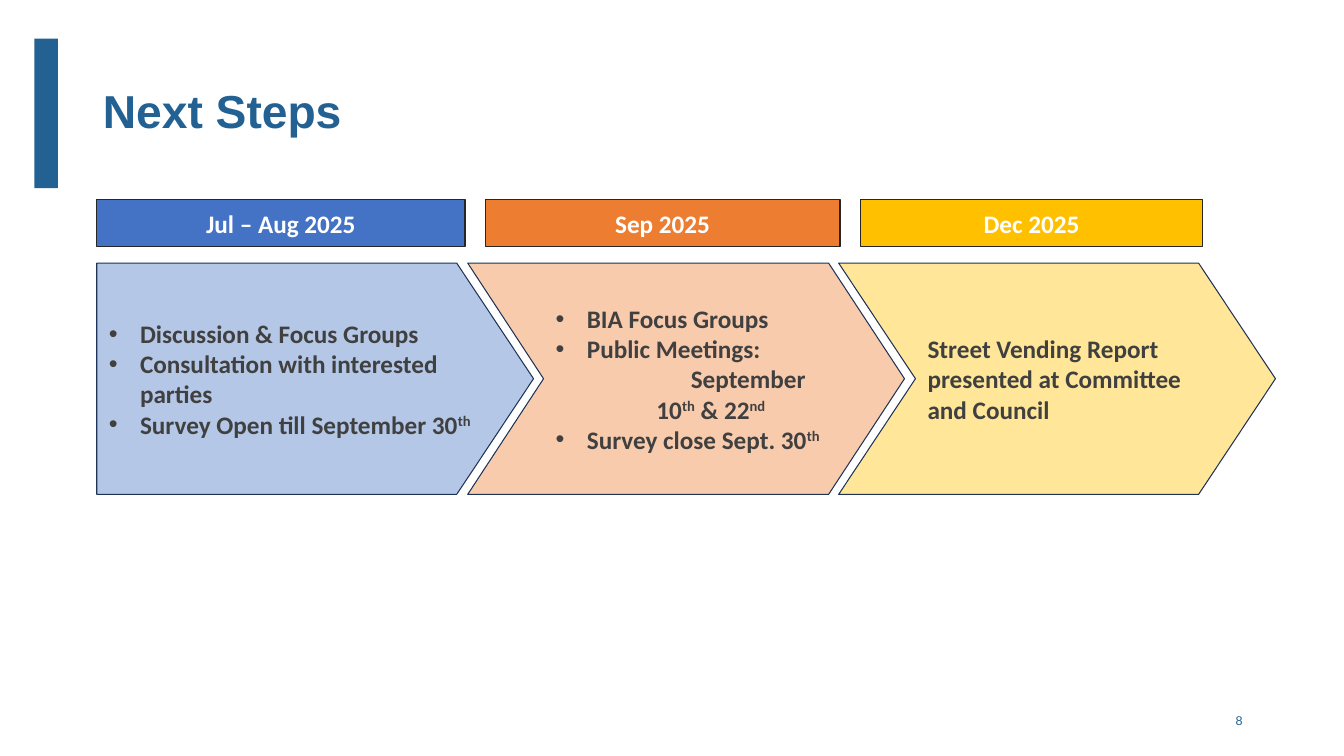
from lxml.etree import SubElement
from pptx import Presentation
from pptx.dml.color import RGBColor
from pptx.enum.shapes import MSO_SHAPE as Shape
from pptx.enum.text import MSO_ANCHOR as Anchor, PP_ALIGN as Align
from pptx.oxml.ns import qn
from pptx.util import Inches, Pt

NAVY, INK, WHITE = "236192", "404040", "FFFFFF"
HEADER_EDGE, ARROW_EDGE = "262626", "1E3256"

# Left margin and hanging indent of each paragraph kind, in inches
INDENTS = {"plain": (0, 0), "bullet": (0.31, -0.31), "dates": (1, 0.34)}

STEPS = [
    dict(period="Jul – Aug 2025", header_width=27.4, header_fill="4472C4",
         outline=Shape.PENTAGON, point=0.332, arrow_fill="B4C7E7",
         actions=[("bullet", "Discussion & Focus Groups"),
                  ("bullet", "Consultation with interested parties"),
                  ("bullet", "Survey Open till September 30^th^")]),
    dict(period="Sep 2025", header_width=26.4, header_fill="ED7D31",
         outline=Shape.CHEVRON, point=0.328, arrow_fill="F8CBAD",
         actions=[("bullet", "BIA Focus Groups"),
                  ("bullet", "Public Meetings:"),
                  ("dates", "September 10^th^ & 22^nd^"),
                  ("bullet", "Survey close Sept. 30^th^")]),
    dict(period="Dec 2025", header_width=25.5, header_fill="FFC000",
         outline=Shape.CHEVRON, point=0.332, arrow_fill="FFE699",
         actions=[("plain", "Street Vending Report presented at "
                            "Committee and Council")]),
]


def rgb(code):
    return RGBColor.from_string(code)


def write(paragraph, text, kind="plain", font="Calibri", size=18, color=INK,
          bold=True, align=Align.LEFT):
    """Fill a paragraph; text between carets is superscript."""
    margin, hanging = INDENTS[kind]
    props = paragraph._p.get_or_add_pPr()
    props.set("marL", str(Inches(margin)))
    props.set("indent", str(Inches(hanging)))
    if kind == "bullet":
        SubElement(props, qn("a:buFont")).set("typeface", "Arial")
        SubElement(props, qn("a:buChar")).set("char", "•")
    paragraph.alignment = align
    for order, part in enumerate(text.split("^")):
        if not part:
            continue
        run = paragraph.add_run()
        run.text = part
        run.font.name, run.font.size, run.font.bold = font, Pt(size), bold
        run.font.color.rgb = rgb(color)
        if order % 2:
            run._r.get_or_add_rPr().set("baseline", "30000")


class Board:
    """Draws on one slide; every place is given in percent of its size."""

    def __init__(self, deck):
        self.deck = deck
        self.slide = deck.slides.add_slide(deck.slide_layouts[5])

    def place(self, left, top, width, height):
        across, down = self.deck.slide_width, self.deck.slide_height
        return [round(share * side / 100) for share, side in
                zip((left, top, width, height), (across, down) * 2)]

    def title(self, text, *box):
        heading = self.slide.shapes.title
        heading.left, heading.top, heading.width, heading.height = self.place(*box)
        heading.text_frame.vertical_anchor = Anchor.MIDDLE
        first = heading.text_frame.paragraphs[0]
        first.line_spacing = 0.9
        write(first, text, font="Arial", size=33, color=NAVY)

    def label(self, text, *box, **style):
        frame = self.slide.shapes.add_textbox(*self.place(*box)).text_frame
        frame.word_wrap = True
        frame.vertical_anchor = Anchor.MIDDLE
        write(frame.paragraphs[0], text, **style)

    def block(self, outline, *box, fill, edge=None):
        block = self.slide.shapes.add_shape(outline, *self.place(*box))
        block.shadow.inherit = False
        block.fill.solid()
        block.fill.fore_color.rgb = rgb(fill)
        if edge:
            block.line.color.rgb = rgb(edge)
            block.line.width = Pt(0.75)
        else:
            block.line.fill.background()
        block.text_frame.word_wrap = True
        block.text_frame.vertical_anchor = Anchor.MIDDLE
        return block

    def header(self, text, *box, fill):
        header = self.block(Shape.RECTANGLE, *box, fill=fill, edge=HEADER_EDGE)
        write(header.text_frame.paragraphs[0], text, color=WHITE,
              align=Align.CENTER)

    def arrow(self, outline, actions, *box, point, fill):
        arrow = self.block(outline, *box, fill=fill, edge=ARROW_EDGE)
        arrow.adjustments[0] = point
        frame = arrow.text_frame
        frame.margin_left, frame.margin_right = Inches(0.12), Inches(0.04)
        frame.margin_top = frame.margin_bottom = 0
        for order, (kind, text) in enumerate(actions):
            line = frame.add_paragraph() if order else frame.paragraphs[0]
            write(line, text, kind)


def main():
    deck = Presentation()
    deck.slide_width, deck.slide_height = Inches(13.33), Inches(7.5)
    board = Board(deck)
    board.block(Shape.RECTANGLE, 2.55, 5.1, 1.75, 19.8, fill=NAVY)
    board.title("Next Steps", 6.9, 5.3, 86.3, 19.3)
    board.label("8", 70.7, 92.7, 22.5, 5.3, font="Arial", size=9,
                color=NAVY, bold=False, align=Align.RIGHT)

    start, pitch, gap = 7.2, 27.6, 1.5
    header_left = start
    for order, step in enumerate(STEPS):
        board.arrow(step["outline"], step["actions"],
                    start + order * pitch, 34.8, 32.5, 30.6,
                    point=step["point"], fill=step["arrow_fill"])
        board.header(step["period"], header_left, 26.4, step["header_width"],
                     6.2, fill=step["header_fill"])
        header_left += step["header_width"] + gap

    deck.save("out.pptx")


if __name__ == "__main__":
    main()
